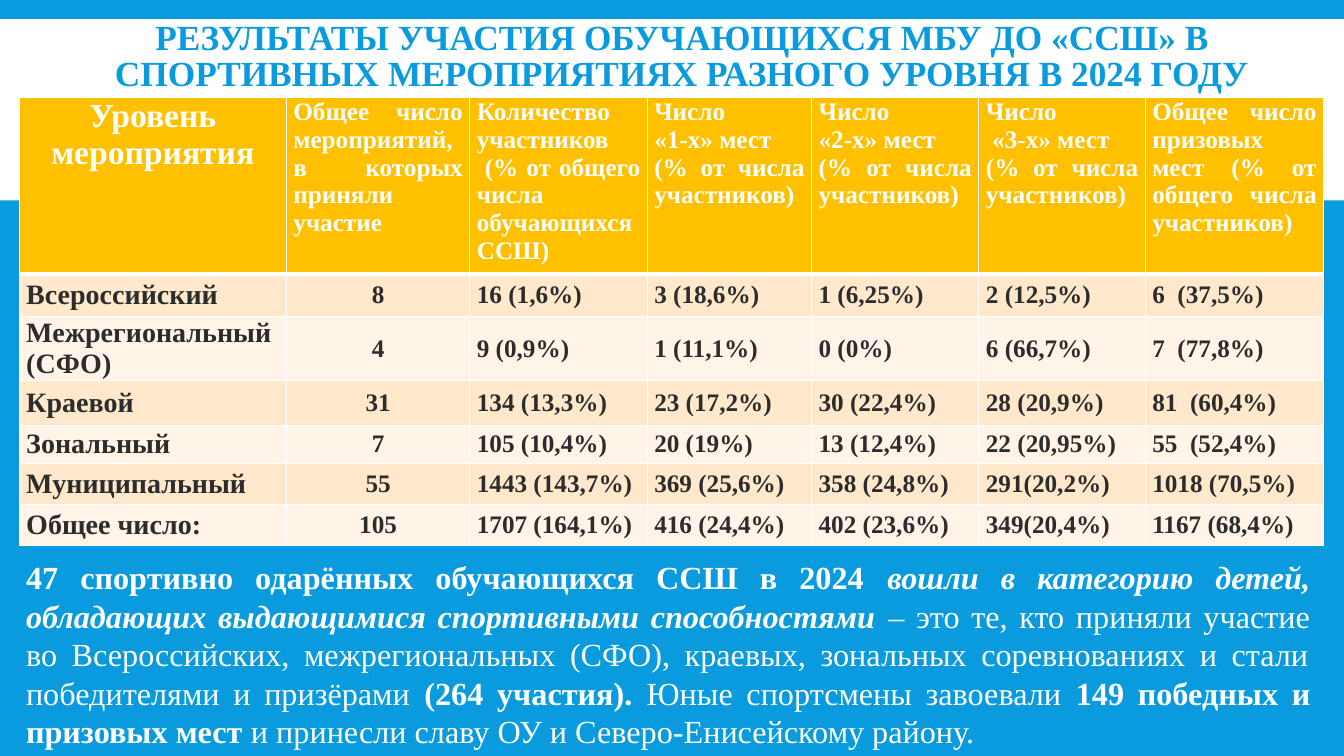
from lxml.etree import SubElement
from pptx import Presentation
from pptx.dml.color import RGBColor
from pptx.enum.shapes import MSO_SHAPE as Preset
from pptx.enum.text import MSO_ANCHOR as Anchor, MSO_AUTO_SIZE as AutoSize, PP_ALIGN as Align
from pptx.oxml.ns import qn
from pptx.util import Inches, Pt

WIDTH, HEIGHT = Inches(13.33), Inches(7.5)
BLUE, WHITE, AMBER, DARK = "099BDD", "FFFFFF", "FFC000", "2C2C2C"
BANDS = "FFE8CC", "FFF4E7"

BAND_BOX = 0, 2.53, 100, 24
TITLE_BOX = 2.78, 2.53, 95.95, 10.27
RESULTS_BOX = 1.43, 12.93, 97.07, 59.2
SUMMARY_BOX = 1.2, 73.07, 97.07, 27.2
COLUMN_SHARES = 19.88, 13.65, 13.2, 12.23, 12.45, 12.38, 13.28
ROW_SHARES = 23.33, 5.6, 8.53, 5.87, 5.07, 5.47, 5.33

TITLE = "РЕЗУЛЬТАТЫ УЧАСТИЯ ОБУЧАЮЩИХСЯ МБУ ДО «ССШ» В СПОРТИВНЫХ МЕРОПРИЯТИЯХ РАЗНОГО УРОВНЯ В 2024 ГОДУ"
RESULTS = [
    ["Уровень мероприятия", "Общее число мероприятий, в которых приняли участие",
     "Количество\nучастников\n (% от общего числа обучающихся ССШ)",
     "Число\n«1-х» мест\n(% от числа участников)",
     "Число\n«2-х» мест\n(% от числа участников)",
     "Число\n «3-х» мест\n(% от числа участников)",
     "Общее число призовых мест (% от общего числа участников)"],
    ["Всероссийский", "8", "16 (1,6%)", "3 (18,6%)", "1 (6,25%)", "2 (12,5%)", "6  (37,5%)"],
    ["Межрегиональный (СФО)", "4", "9 (0,9%)", "1 (11,1%)", "0 (0%)", "6 (66,7%)", "7  (77,8%)"],
    ["Краевой", "31", "134 (13,3%)", "23 (17,2%)", "30 (22,4%)", "28 (20,9%)", "81  (60,4%)"],
    ["Зональный", "7", "105 (10,4%)", "20 (19%)", "13 (12,4%)", "22 (20,95%)", "55  (52,4%)"],
    ["Муниципальный", "55", "1443 (143,7%)", "369 (25,6%)", "358 (24,8%)", "291(20,2%)", "1018 (70,5%)"],
    ["Общее число:", "105", "1707 (164,1%)", "416 (24,4%)", "402 (23,6%)", "349(20,4%)", "1167 (68,4%)"],
]
SUMMARY = [
    ("47 спортивно одарённых обучающихся ССШ в 2024 ", True, False),
    ("вошли в категорию детей, обладающих выдающимися спортивными способностями ", True, True),
    ("– это те, кто приняли участие во Всероссийских, межрегиональных (СФО), краевых, "
     "зональных соревнованиях и стали победителями и призёрами", False, False),
    (" (264 участия). ", True, False),
    ("Юные спортсмены завоевали ", False, False),
    ("149 победных и призовых мест ", True, False),
    ("и принесли славу ОУ и Северо-Енисейскому району.", False, False),
]


def color(code):
    return RGBColor.from_string(code)


def across(share):
    return round(WIDTH * share / 100)


def down(share):
    return round(HEIGHT * share / 100)


def place(box):
    left, top, width, height = box
    return across(left), down(top), across(width), down(height)


def apply(target, values):
    for name, value in values.items():
        setattr(target, name, value)


def format_font(font, size, ink, bold=True, italic=False):
    apply(font, {"name": "Times New Roman", "size": Pt(size), "bold": bold, "italic": italic})
    font.color.rgb = color(ink)


def add_band(slide, box):
    band = slide.shapes.add_shape(Preset.RECTANGLE, *place(box))
    band.shadow.inherit = False
    band.fill.solid()
    band.fill.fore_color.rgb = color(WHITE)
    band.line.fill.background()
    slide.shapes._spTree.insert(2, band._element)


def add_title(slide, box):
    title = slide.shapes.title
    apply(title, dict(zip(("left", "top", "width", "height"), place(box))))
    frame = title.text_frame
    frame.text = TITLE
    apply(frame, {"word_wrap": True, "auto_size": AutoSize.NONE, "vertical_anchor": Anchor.MIDDLE})
    heading = frame.paragraphs[0]
    apply(heading, {"alignment": Align.CENTER, "line_spacing": 0.85})
    format_font(heading.runs[0].font, 25.2, BLUE)


def add_borders(cell, weights):
    properties = cell._tc.get_or_add_tcPr()
    for side, weight in zip("LRTB", weights):
        border = SubElement(properties, qn(f"a:ln{side}"), w=str(Pt(weight)))
        SubElement(SubElement(border, qn("a:solidFill")), qn("a:srgbClr"), val=WHITE)


def fill_cell(cell, text, row, column):
    header = row == 0
    add_borders(cell, (1, 1, 3 if row == 1 else 1, 3 if header else 1))
    cell.fill.solid()
    cell.fill.fore_color.rgb = color(AMBER if header else BANDS[(row - 1) % 2])
    apply(cell, {"margin_left": Inches(0.07), "margin_right": Inches(0.07),
                 "margin_top": 0, "margin_bottom": 0,
                 "vertical_anchor": Anchor.TOP if header else Anchor.MIDDLE})
    cell.text = text
    if column == (0 if header else 1):
        alignment = Align.CENTER
    elif column == 2 and not header:
        alignment = Align.LEFT
    else:
        alignment = Align.JUSTIFY
    size = 18 if column else 24 if header else 20
    for paragraph in cell.text_frame.paragraphs:
        paragraph.alignment = alignment
        format_font(paragraph.runs[0].font, size, WHITE if header else DARK)


def add_results(slide, box):
    results = slide.shapes.add_table(len(ROW_SHARES), len(COLUMN_SHARES), *place(box)).table
    apply(results, {"first_row": False, "horz_banding": False})
    for column, share in zip(results.columns, COLUMN_SHARES):
        column.width = across(share)
    for row, share in zip(results.rows, ROW_SHARES):
        row.height = down(share)
    for row, texts in enumerate(RESULTS):
        for column, text in enumerate(texts):
            fill_cell(results.cell(row, column), text, row, column)


def add_summary(slide, box):
    frame = slide.shapes.add_textbox(*place(box)).text_frame
    apply(frame, {"word_wrap": True, "auto_size": AutoSize.SHAPE_TO_FIT_TEXT})
    summary = frame.paragraphs[0]
    summary.alignment = Align.JUSTIFY
    for text, bold, italic in SUMMARY:
        phrase = summary.add_run()
        phrase.text = text
        format_font(phrase.font, 23, WHITE, bold, italic)


def build_results_slide(deck):
    slide = deck.slides.add_slide(deck.slide_layouts[5])
    slide.background.fill.solid()
    slide.background.fill.fore_color.rgb = color(BLUE)
    add_band(slide, BAND_BOX)
    add_title(slide, TITLE_BOX)
    add_results(slide, RESULTS_BOX)
    add_summary(slide, SUMMARY_BOX)


def main():
    deck = Presentation()
    apply(deck, {"slide_width": WIDTH, "slide_height": HEIGHT})
    build_results_slide(deck)
    deck.save("out.pptx")


if __name__ == "__main__":
    main()
